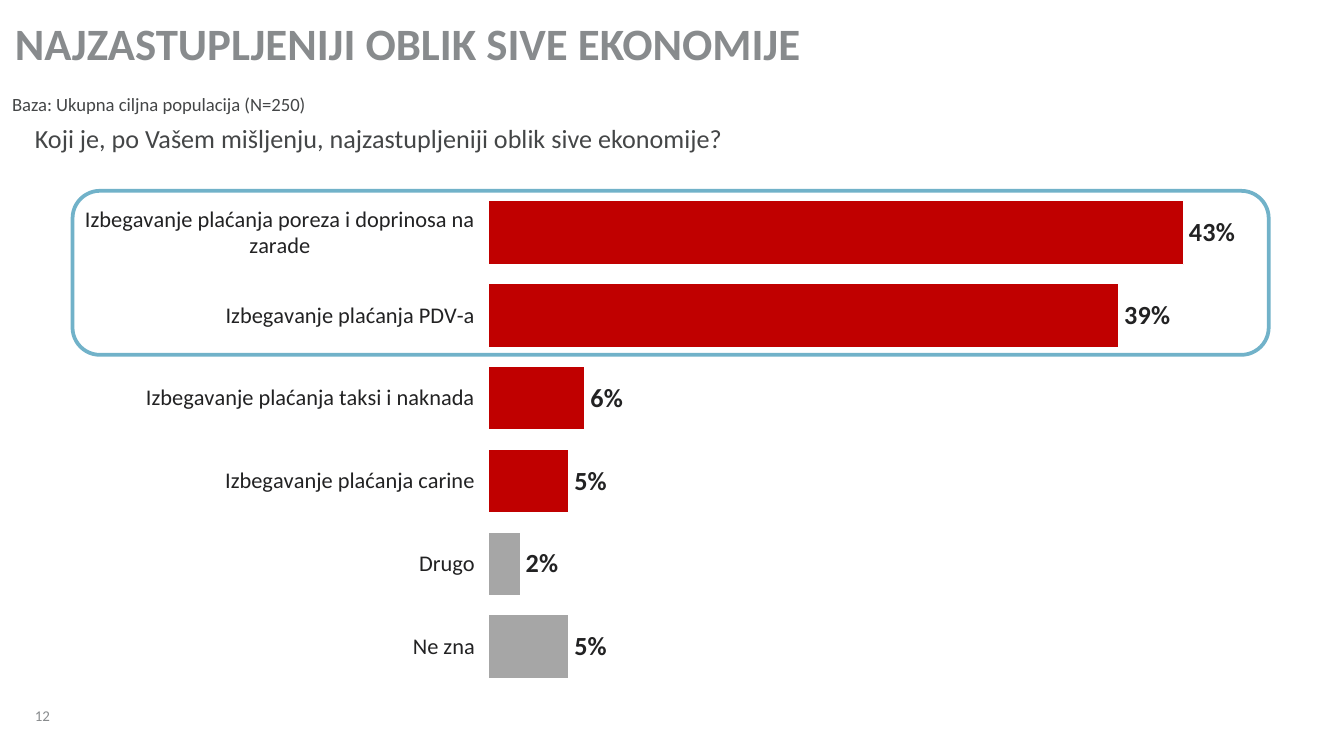
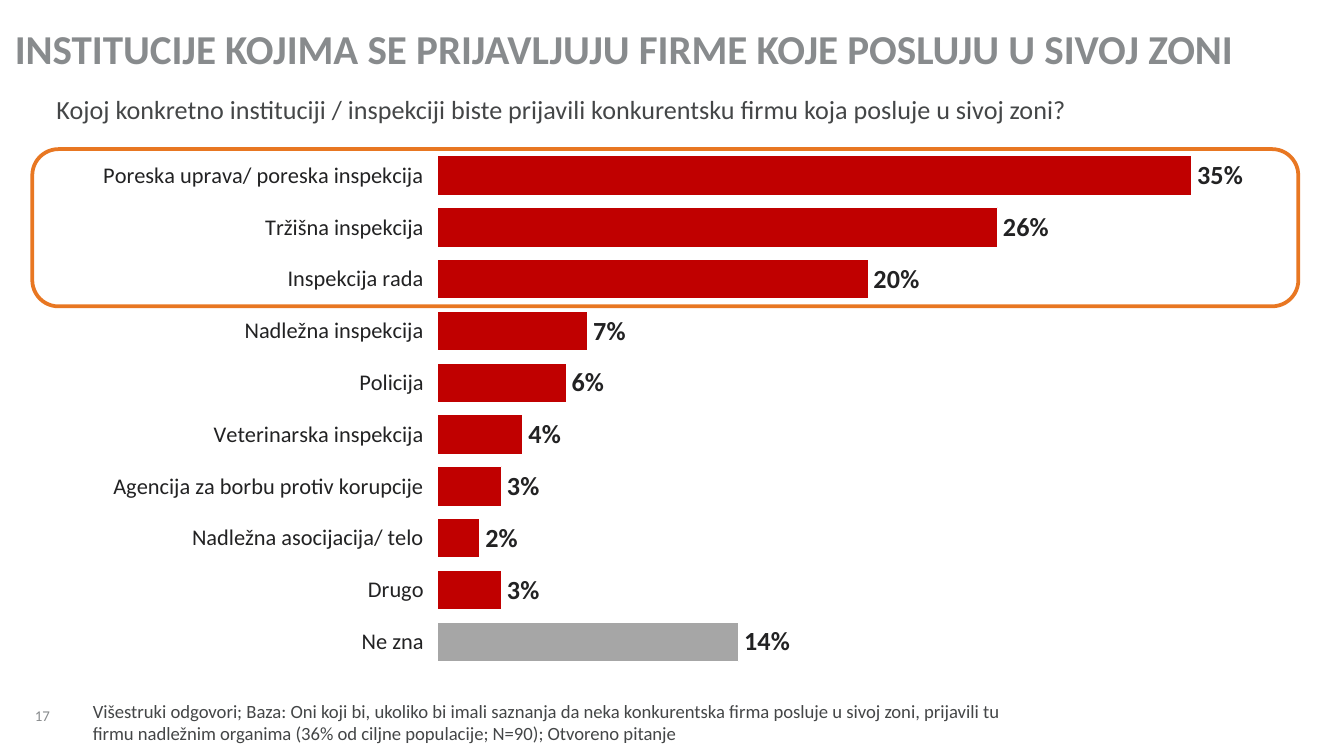
"""Builds two survey slides on the grey economy, each with a highlighted bar chart."""
from lxml import etree
from pptx import Presentation
from pptx.chart.data import CategoryChartData
from pptx.dml.color import RGBColor
from pptx.enum import chart as ch, shapes, text
from pptx.util import Inches, Pt

FONT = "Calibri"
GREY = RGBColor(0x88, 0x8B, 0x8D)
DARK = RGBColor(0x44, 0x46, 0x47)
INK = RGBColor(0x22, 0x22, 0x23)
RED = RGBColor(0xC0, 0x00, 0x00)
NEUTRAL = RGBColor(0xA6, 0xA6, 0xA6)
WHITE = RGBColor(0xFF, 0xFF, 0xFF)
BLUE = RGBColor(0x71, 0xB2, 0xC9)
ORANGE = RGBColor(0xE8, 0x77, 0x22)
BOTTOM, MIDDLE = text.MSO_ANCHOR.BOTTOM, text.MSO_ANCHOR.MIDDLE

PAGES = [
    {
        "number": "12",
        "title": ("NAJZASTUPLJENIJI OBLIK SIVE EKONOMIJE", 24, (0.11, 0.04, 9.79, 0.48)),
        "question": ("Koji je, po Vašem mišljenju, najzastupljeniji oblik sive ekonomije?",
                     (0.26, 0.88, 9.47, 0.31)),
        "base": ("Baza: Ukupna ciljna populacija (N=250)", (0.09, 0.51, 6.91, 0.35)),
        "answers": [
            ("Izbegavanje plaćanja poreza i doprinosa na zarade", 43),
            ("Izbegavanje plaćanja PDV-a", 39),
            ("Izbegavanje plaćanja taksi i naknada", 6),
            ("Izbegavanje plaćanja carine", 5),
            ("Drugo", 2),
            ("Ne zna", 5),
        ],
        "neutral": ["Drugo", "Ne zna"],
        "chart": (0.32, 1.42, 9.33, 3.7),
        "label_share": 0.355,
        "axis_max": 50,
        "highlight": (BLUE, (0.54, 1.42, 8.9, 1.22)),
    },
    {
        "number": "17",
        "title": ("INSTITUCIJE KOJIMA SE PRIJAVLJUJU FIRME KOJE POSLUJU U SIVOJ ZONI", 22,
                  (0.11, 0.15, 9.79, 0.39)),
        "question": ("Kojoj konkretno instituciji / inspekciji biste prijavili konkurentsku "
                     "firmu koja posluje u sivoj zoni?", (0.42, 0.67, 9.47, 0.31)),
        "base": ("Višestruki odgovori; Baza: Oni koji bi, ukoliko bi imali saznanja da neka "
                 "konkurentska firma posluje u sivoj zoni, prijavili tu firmu nadležnim "
                 "organima (36% od ciljne populacije; N=90); Otvoreno pitanje",
                 (0.69, 5.11, 6.91, 0.43)),
        "answers": [
            ("Poreska uprava/ poreska inspekcija", 35),
            ("Tržišna inspekcija", 26),
            ("Inspekcija rada", 20),
            ("Nadležna inspekcija", 7),
            ("Policija", 6),
            ("Veterinarska inspekcija", 4),
            ("Agencija za borbu protiv korupcije", 3),
            ("Nadležna asocijacija/ telo", 2),
            ("Drugo", 3),
            ("Ne zna", 14),
        ],
        "neutral": ["Ne zna"],
        "chart": (0.34, 1.11, 9.33, 3.86),
        "label_share": 0.312,
        "axis_max": 40,
        "highlight": (ORANGE, (0.24, 1.11, 9.42, 1.17)),
    },
]


def add_text(slide, words, place, size, color, anchor=BOTTOM, bold=False, spacing=0.95, wrap=True):
    frame = slide.shapes.add_textbox(*map(Inches, place)).text_frame
    frame.margin_left = frame.margin_top = frame.margin_right = frame.margin_bottom = 0
    frame.word_wrap = wrap
    frame.vertical_anchor = anchor
    paragraph = frame.paragraphs[0]
    paragraph.line_spacing = spacing
    run = paragraph.add_run()
    run.text = words
    run.font.name = FONT
    run.font.size = Pt(size)
    run.font.bold = bold
    run.font.color.rgb = color


def add_bars(slide, page):
    data = CategoryChartData()
    data.categories = [answer for answer, share in page["answers"]]
    data.add_series("Series 1", [share for answer, share in page["answers"]])
    chart = slide.shapes.add_chart(
        ch.XL_CHART_TYPE.BAR_CLUSTERED, *map(Inches, page["chart"]), data).chart
    chart.has_legend = False
    chart.has_title = False
    chart.font.name = FONT
    chart.font.size = Pt(18)
    chart.font.color.rgb = INK

    answers_axis = chart.category_axis
    answers_axis.reverse_order = True
    answers_axis.format.line.fill.background()
    answers_axis.tick_labels.font.size = Pt(12)
    shares_axis = chart.value_axis
    shares_axis.visible = False
    shares_axis.has_major_gridlines = False
    shares_axis.minimum_scale = 0
    shares_axis.maximum_scale = page["axis_max"]

    plot = chart.plots[0]
    plot.gap_width = 30
    plot.vary_by_categories = False
    bars = plot.series[0]
    bars.invert_if_negative = False
    neutral = [i for i, (answer, share) in enumerate(page["answers"]) if answer in page["neutral"]]
    for part, color in [(bars, RED)] + [(bars.points[i], NEUTRAL) for i in neutral]:
        part.format.fill.solid()
        part.format.fill.fore_color.rgb = color
        part.format.line.color.rgb = WHITE
        part.format.line.width = Pt(0.75)

    labels = bars.data_labels
    labels.show_value = True
    labels.position = ch.XL_LABEL_POSITION.OUTSIDE_END
    labels.number_format = '#"%"'
    labels.number_format_is_linked = False
    labels.font.size = Pt(14)
    labels.font.bold = True
    labels.font.color.rgb = INK

    area = chart.element.chart.plotArea
    for old in area.findall("{*}layout"):
        area.remove(old)
    ns = etree.QName(area).namespace
    layout = etree.Element(f"{{{ns}}}layout")
    manual = etree.SubElement(layout, f"{{{ns}}}manualLayout")
    left = page["label_share"]
    for tag, value in [("layoutTarget", "inner"), ("xMode", "edge"), ("yMode", "edge"),
                       ("x", left), ("y", 0.001), ("w", round(1 - left, 3)), ("h", 0.999)]:
        etree.SubElement(manual, f"{{{ns}}}{tag}").set("val", str(value))
    area.insert(0, layout)


deck = Presentation()
deck.slide_width = Inches(10)
deck.slide_height = deck.slide_width * 9 // 16

for page in PAGES:
    slide = deck.slides.add_slide(deck.slide_layouts[6])
    add_text(slide, page["number"], (0.26, 5.13, 0.34, 0.26), 8, GREY, spacing=0.85, wrap=False)
    base, base_place = page["base"]
    add_text(slide, base, base_place, 10, DARK)
    add_bars(slide, page)

    outline_color, outline_place = page["highlight"]
    outline = slide.shapes.add_shape(
        shapes.MSO_SHAPE.ROUNDED_RECTANGLE, *map(Inches, outline_place))
    outline.shadow.inherit = False
    outline.fill.background()
    outline.line.color.rgb = outline_color
    outline.line.width = Pt(2)

    title, title_size, title_place = page["title"]
    add_text(slide, title, title_place, title_size, GREY, bold=True, spacing=1.0)
    question, question_place = page["question"]
    add_text(slide, question, question_place, 14, DARK, anchor=MIDDLE)

deck.save("out.pptx")
